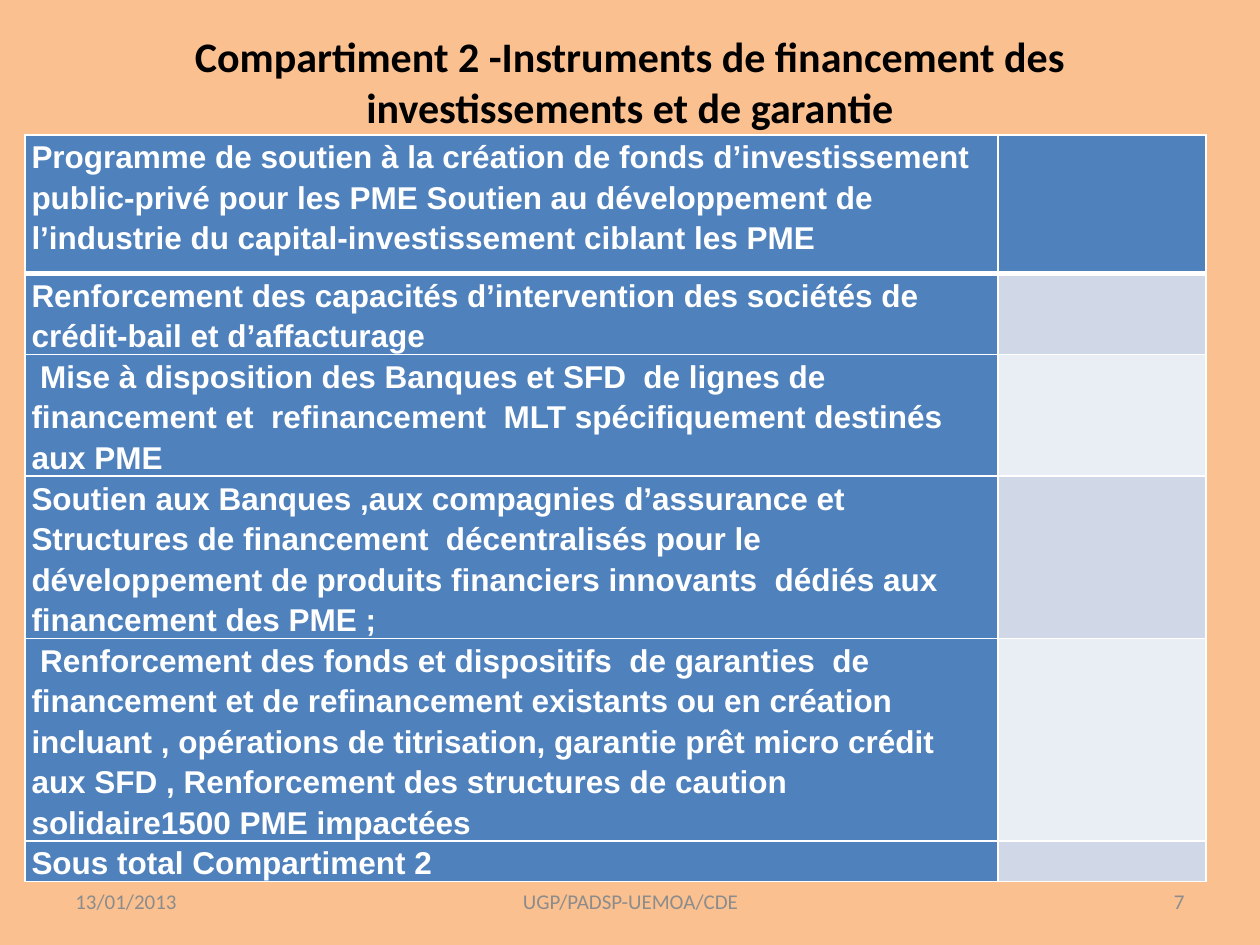
"""Build the slide on financing and guarantee instruments."""
from dataclasses import dataclass

from lxml.etree import SubElement
from pptx import Presentation
from pptx.dml.color import RGBColor
from pptx.enum.text import MSO_ANCHOR, PP_ALIGN
from pptx.oxml.ns import qn
from pptx.util import Inches, Pt

BLUE, WHITE, GREY = "4F81BD", "FFFFFF", "8C8C8C"
BANDS = ("E9EDF4", "D0D8E8")
COLUMN_WIDTHS = (7.72, 1.65)


@dataclass
class Label:
    text: str
    left: float
    top: float
    width: float
    height: float
    align: PP_ALIGN
    size: int = 12
    color: str = GREY
    bold: bool = False


@dataclass
class Instrument:
    text: str
    height: float
    anchor: MSO_ANCHOR = MSO_ANCHOR.MIDDLE
    space_after: int = 0


LABELS = (
    Label("Compartiment 2 -Instruments de financement des investissements et de garantie",
          0.5, 0.3, 9, 0.69, PP_ALIGN.CENTER, 24, "000000", True),
    Label("13/01/2013", 0.5, 6.95, 2.33, 0.4, PP_ALIGN.LEFT),
    Label("UGP/PADSP-UEMOA/CDE", 3.42, 6.95, 3.17, 0.4, PP_ALIGN.CENTER),
    Label("7", 7.17, 6.95, 2.33, 0.4, PP_ALIGN.RIGHT),
)

INSTRUMENTS = (
    Instrument("Programme de soutien à la création de fonds d’investissement public-privé "
               "pour les PME Soutien au développement de l’industrie du "
               "capital-investissement ciblant les PME", 1.1, MSO_ANCHOR.TOP),
    Instrument("Renforcement des capacités d’intervention des sociétés de crédit-bail "
               "et d’affacturage", 0.43),
    Instrument(" Mise à disposition des Banques et SFD  de lignes de financement et  "
               "refinancement  MLT spécifiquement destinés aux PME", 0.64, MSO_ANCHOR.TOP, 12),
    Instrument("Soutien aux Banques ,aux compagnies d’assurance et Structures de financement  "
               "décentralisés pour le développement de produits financiers innovants  "
               "dédiés aux financement des PME ;", 0.87, MSO_ANCHOR.TOP),
    Instrument(" Renforcement des fonds et dispositifs  de garanties  de financement et de "
               "refinancement existants ou en création incluant , opérations de titrisation, "
               "garantie prêt micro crédit aux SFD , Renforcement des structures de caution "
               "solidaire1500 PME impactées", 1.15),
    Instrument("Sous total Compartiment 2", 0.23),
)


def rgb(color: str) -> RGBColor:
    return RGBColor.from_string(color)


def style_font(font, name: str, size: int, color: str, bold: bool) -> None:
    font.name, font.size, font.bold = name, Pt(size), bold
    font.color.rgb = rgb(color)


def add_label(slide, label: Label) -> None:
    box = slide.shapes.add_textbox(Inches(label.left), Inches(label.top),
                                   Inches(label.width), Inches(label.height))
    frame = box.text_frame
    frame.word_wrap = True
    frame.vertical_anchor = MSO_ANCHOR.MIDDLE
    frame.text = label.text
    paragraph = frame.paragraphs[0]
    paragraph.alignment = label.align
    style_font(paragraph.runs[0].font, "Calibri", label.size, label.color, label.bold)


def add_borders(cell, top: int, bottom: int) -> None:
    properties = cell._tc.get_or_add_tcPr()
    for side, width in (("L", 1), ("R", 1), ("T", top), ("B", bottom)):
        line = SubElement(properties, qn(f"a:ln{side}"), w=str(Pt(width)))
        SubElement(SubElement(line, qn("a:solidFill")), qn("a:srgbClr"), val=WHITE)


def format_cell(cell, fill: str, row: int) -> None:
    add_borders(cell, 3 if row == 1 else 1, 3 if row == 0 else 1)
    cell.fill.solid()
    cell.fill.fore_color.rgb = rgb(fill)
    cell.margin_left = cell.margin_right = Inches(0.05)
    cell.margin_top = cell.margin_bottom = 0
    style_font(cell.text_frame.paragraphs[0].font, "Arial", 18, WHITE, True)


def add_instruments(slide, instruments: tuple[Instrument, ...]) -> None:
    height = sum(instrument.height for instrument in instruments)
    table = slide.shapes.add_table(len(instruments), len(COLUMN_WIDTHS), Inches(0.2),
                                   Inches(1.07), Inches(sum(COLUMN_WIDTHS)),
                                   Inches(height)).table
    for column, width in zip(table.columns, COLUMN_WIDTHS):
        column.width = Inches(width)
    for row, instrument in enumerate(instruments):
        table.rows[row].height = Inches(instrument.height)
        name_cell, amount_cell = table.cell(row, 0), table.cell(row, 1)
        name_cell.text_frame.text = instrument.text
        name_cell.vertical_anchor = instrument.anchor
        format_cell(name_cell, BLUE, row)
        format_cell(amount_cell, BANDS[row % 2] if row else BLUE, row)
        paragraph = name_cell.text_frame.paragraphs[0]
        paragraph.line_spacing = 1.15
        paragraph.space_after = Pt(instrument.space_after)
        style_font(paragraph.runs[0].font, "Arial", 18, WHITE, True)


def main() -> None:
    presentation = Presentation()
    presentation.slide_width, presentation.slide_height = Inches(10), Inches(7.5)
    slide = presentation.slides.add_slide(presentation.slide_layouts[6])
    slide.background.fill.solid()
    slide.background.fill.fore_color.rgb = rgb("FAC090")
    add_instruments(slide, INSTRUMENTS)
    for label in LABELS:
        add_label(slide, label)
    presentation.save("out.pptx")


if __name__ == "__main__":
    main()
